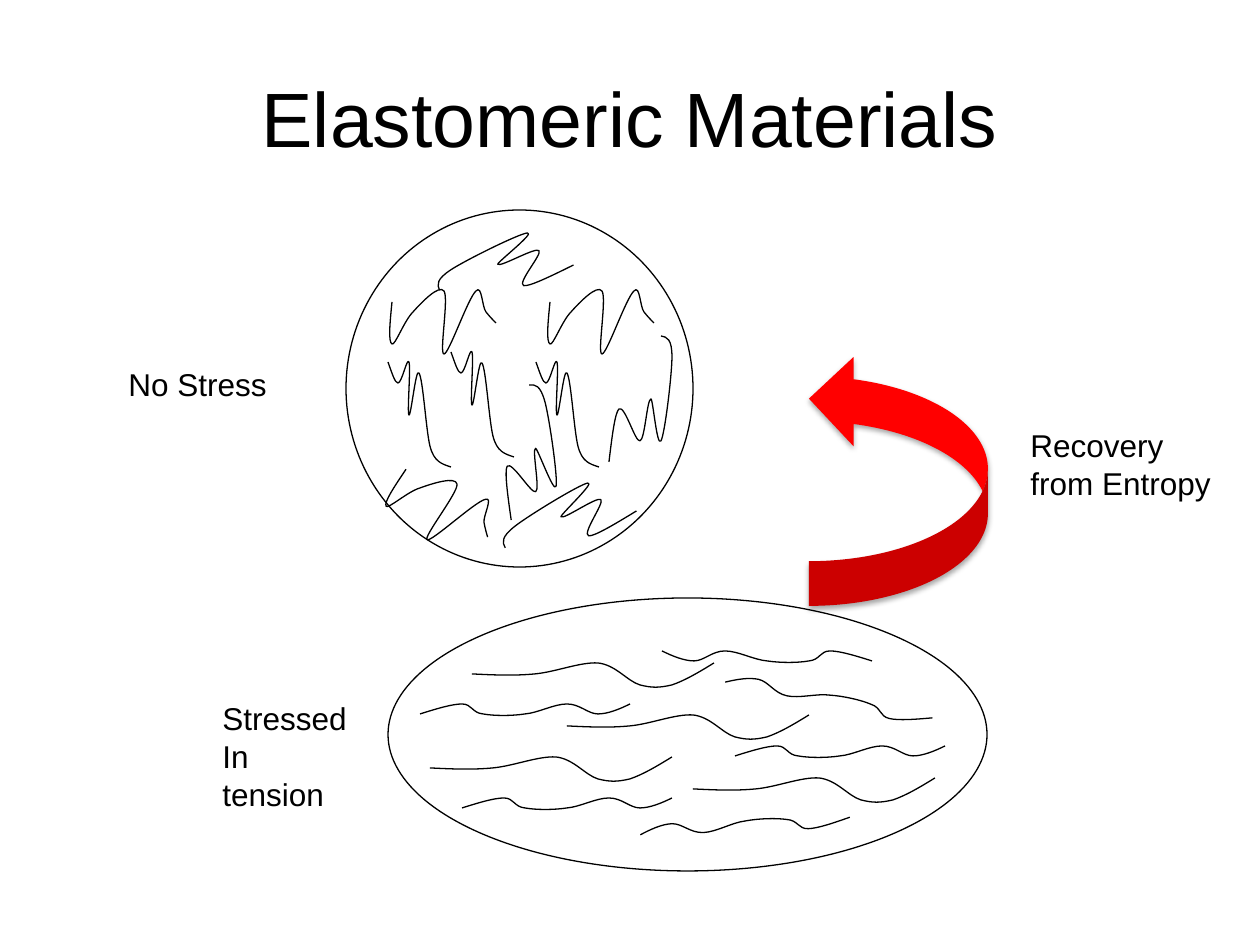
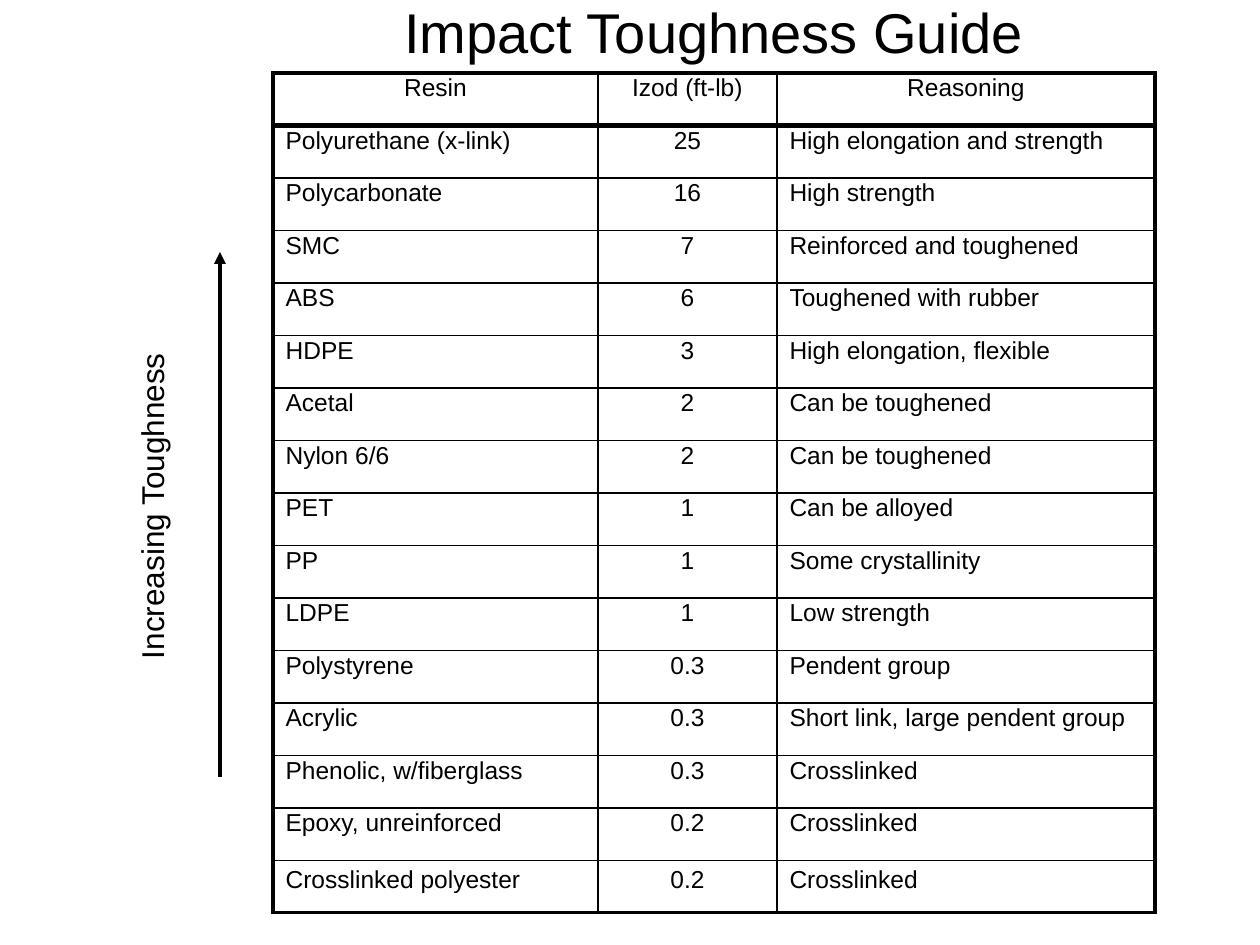
from lxml.etree import SubElement
from pptx import Presentation
from pptx.dml.color import RGBColor
from pptx.enum.shapes import MSO_CONNECTOR, MSO_SHAPE
from pptx.enum.text import MSO_ANCHOR, MSO_AUTO_SIZE, PP_ALIGN
from pptx.oxml.ns import qn
from pptx.util import Emu, Pt

SCALE = 914400 / 126  # EMU in one px
BLACK = RGBColor(0x00, 0x00, 0x00)
RED = RGBColor(0xFF, 0x00, 0x00)
FONT = "Arial"
TITLE_ONLY = 5

# Chain curves: a start point, then three Bezier points for each segment
WAVE = [(4, 18),
        (2, 38), (0, 58), (4, 60), (7, 62), (16, 37), (25, 28),
        (33, 19), (51, 0), (56, 7), (61, 14), (51, 70), (56, 70),
        (61, 70), (80, 14), (88, 7), (94, 0), (94, 23), (98, 28),
        (102, 33), (105, 36), (108, 39)]
HOOK = [(0, 5),
        (4, 16), (7, 26), (10, 26), (14, 26), (19, 0), (21, 5),
        (23, 10), (19, 56), (21, 58), (23, 60), (28, 10), (31, 16),
        (35, 21), (38, 73), (42, 89), (46, 105), (54, 107), (63, 110)]
COIL = [(0, 126),
        (3, 101), (6, 77), (10, 73), (16, 69), (26, 106), (31, 105),
        (36, 104), (38, 63), (42, 63), (44, 63), (48, 112), (52, 105),
        (56, 98), (63, 38), (63, 21), (63, 3), (58, 1), (52, 0)]
SWELL = [(0, 12),
         (21, 13), (42, 14), (63, 12), (84, 10), (108, 0), (126, 1),
         (144, 3), (155, 19), (168, 23), (180, 26), (187, 26), (200, 23),
         (212, 19), (226, 11), (242, 1)]
RIPPLE = [(0, 10),
          (16, 5), (32, 0), (42, 0), (52, 0), (52, 9), (63, 10),
          (74, 12), (92, 12), (105, 10), (118, 9), (134, 0), (147, 0),
          (160, 0), (168, 10), (178, 10), (188, 10), (200, 5), (210, 0)]

# Chains in each material: curve, left, top, rotation, flipped
COILED_CHAINS = [
    (WAVE, 200, 74, 0, False), (WAVE, 42, 74, 0, False),
    (WAVE, 42, 263, 28.3, False),
    (HOOK, 42, 147, 0, False), (HOOK, 190, 147, 0, False),
    (HOOK, 105, 137, 0, False),
    (COIL, 263, 126, 0, False), (COIL, 190, 252, 231.9, False),
    (COIL, 148, 178, 345.1, False), (COIL, 126, 0, 236.9, False),
]
ALIGNED_CHAINS = [
    (SWELL, 84, 64, 0, False), (SWELL, 179, 116, 0, False),
    (SWELL, 42, 158, 0, False), (SWELL, 305, 179, 0, False),
    (RIPPLE, 32, 106, 0, False), (RIPPLE, 347, 148, 0, False),
    (RIPPLE, 336, 95, 192.5, False), (RIPPLE, 274, 53, 180, True),
    (RIPPLE, 74, 200, 0, False), (RIPPLE, 252, 221, 177.9, False),
]

TOUGHNESS = [
    ("Resin", "Izod (ft-lb)", "Reasoning"),
    ("Polyurethane (x-link)", "25", "High elongation and strength"),
    ("Polycarbonate", "16", "High strength"),
    ("SMC", "7", "Reinforced and toughened"),
    ("ABS", "6", "Toughened with rubber"),
    ("HDPE", "3", "High elongation, flexible"),
    ("Acetal", "2", "Can be toughened"),
    ("Nylon 6/6", "2", "Can be toughened"),
    ("PET", "1", "Can be alloyed"),
    ("PP", "1", "Some crystallinity"),
    ("LDPE", "1", "Low strength"),
    ("Polystyrene", "0.3", "Pendent group"),
    ("Acrylic", "0.3", "Short link, large pendent group"),
    ("Phenolic, w/fiberglass", "0.3", "Crosslinked"),
    ("Epoxy, unreinforced", "0.2", "Crosslinked"),
    ("Crosslinked polyester", "0.2", "Crosslinked"),
]
COLUMN_WIDTHS = (325, 179, 378)


def px(*lengths):
    return [Emu(round(length * SCALE)) for length in lengths]


def set_font(para, size):
    para.font.name = FONT
    para.font.size = Pt(size)
    para.font.color.rgb = BLACK


def flip_vertically(shape):
    shape.element.spPr.find(qn("a:xfrm")).set("flipV", "1")


def outline(shape):
    shape.shadow.inherit = False
    shape.fill.background()
    shape.line.color.rgb = BLACK
    shape.line.width = Pt(0.75)


def add_page(deck, title, box, size):
    page = deck.slides.add_slide(deck.slide_layouts[TITLE_ONLY])
    holder = page.shapes.title
    holder.left, holder.top, holder.width, holder.height = px(*box)
    frame = holder.text_frame
    frame.text = title
    frame.auto_size = MSO_AUTO_SIZE.NONE
    frame.vertical_anchor = MSO_ANCHOR.MIDDLE
    para = frame.paragraphs[0]
    para.alignment = PP_ALIGN.CENTER
    set_font(para, size)
    return page


def add_label(shapes, text, box):
    label = shapes.add_textbox(*px(*box))
    frame = label.text_frame
    frame.word_wrap = False
    frame.auto_size = MSO_AUTO_SIZE.SHAPE_TO_FIT_TEXT
    frame.text = text
    for para in frame.paragraphs:
        set_font(para, 18)
    return label


def add_chain(shapes, curve, left, top, rotation, flipped):
    builder = shapes.build_freeform(*curve[0], scale=SCALE)
    builder.add_line_segments(curve[1:], close=False)
    chain = builder.convert_to_shape(*px(left, top))
    # Join each three line segments into one Bezier segment
    outline_path = next(chain.element.iter(qn("a:path")))
    segments = outline_path.findall(qn("a:lnTo"))
    for start in range(0, len(segments), 3):
        bezier = SubElement(outline_path, qn("a:cubicBezTo"))
        for segment in segments[start:start + 3]:
            bezier.append(segment[0])
            outline_path.remove(segment)
    outline(chain)
    chain.rotation = rotation
    if flipped:
        flip_vertically(chain)


def draw_material(page, box, chains, caption, caption_box):
    left, top, width, height = box
    shapes = page.shapes.add_group_shape().shapes
    outline(shapes.add_shape(MSO_SHAPE.OVAL, *px(*box)))
    for curve, x, y, rotation, flipped in chains:
        add_chain(shapes, curve, left + x, top + y, rotation, flipped)
    x, y, caption_width, caption_height = caption_box
    add_label(shapes, caption,
              (left + x, top + y, caption_width, caption_height))


def draw_recovery(page, box):
    left, top, width, height = box
    arrow = page.shapes.add_shape(MSO_SHAPE.CURVED_LEFT_ARROW, *px(*box))
    arrow.fill.solid()
    arrow.fill.fore_color.rgb = RED
    arrow.line.fill.background()
    flip_vertically(arrow)
    # Soft shadow straight below
    arrow.shadow.inherit = False
    effects = arrow.element.spPr.find(qn("a:effectLst"))
    shadow = SubElement(effects, qn("a:outerShdw"), blurRad=str(Pt(3.1)),
                        dist=str(Pt(1.8)), dir="5400000", rotWithShape="0")
    color = SubElement(shadow, qn("a:srgbClr"), val=str(BLACK))
    SubElement(color, qn("a:alpha"), val="35000")
    add_label(page.shapes, "Recovery\nfrom Entropy",
              (left + width + 30, top + 66, 208, 89))


def set_borders(cell, widths):
    properties = cell._tc.get_or_add_tcPr()
    for side, width in zip("LRTB", widths):
        border = SubElement(properties, qn(f"a:ln{side}"), w=str(Pt(width)))
        fill = SubElement(border, qn("a:solidFill"))
        SubElement(fill, qn("a:srgbClr"), val=str(BLACK))


def draw_table(page, box):
    row_count, column_count = len(TOUGHNESS), len(COLUMN_WIDTHS)
    table = page.shapes.add_table(row_count, column_count, *px(*box)).table
    table.first_row = table.horz_banding = False
    for column, width in zip(table.columns, px(*COLUMN_WIDTHS)):
        column.width = width
    row_height, = px(box[3] / row_count)
    # Line widths: heavy frame, heavier rule below the heading
    across = [2.25, 3] + [1] * (row_count - 2) + [2.25]
    down = [2.25] + [1] * (column_count - 1) + [2.25]
    for r, texts in enumerate(TOUGHNESS):
        table.rows[r].height = row_height
        for c, text in enumerate(texts):
            cell = table.cell(r, c)
            set_borders(cell, (down[c], down[c + 1], across[r], across[r + 1]))
            cell.fill.background()
            cell.text = text
            para = cell.text_frame.paragraphs[0]
            centered = r == 0 or c == 1
            para.alignment = PP_ALIGN.CENTER if centered else PP_ALIGN.LEFT
            para.line_spacing = 1.0 if r == row_count - 1 else 0.8
            set_font(para, 14)


def draw_toughness_scale(page, box):
    left, top, width, height = box
    right, bottom = left + width, top + height
    arrow = page.shapes.add_connector(MSO_CONNECTOR.STRAIGHT,
                                      *px(right, bottom, right, top))
    arrow.line.color.rgb = BLACK
    arrow.line.width = Pt(2.25)
    SubElement(arrow.line._get_or_add_ln(), qn("a:tailEnd"), type="triangle")
    SubElement(arrow.element.spPr, qn("a:effectLst"))
    # Label turned to read upwards
    label = add_label(page.shapes, "Increasing Toughness",
                      (left - 142, top + 227, 335, 50))
    label.rotation = 270


def main():
    deck = Presentation()
    deck.slide_width, deck.slide_height = px(1260, 945)

    page = add_page(deck, "Elastomeric Materials", (63, 38, 1134, 158), 44)
    draw_material(page, (346, 210, 347, 357), COILED_CHAINS,
                  "No Stress", (-230, 149, 164, 50))
    draw_material(page, (388, 598, 599, 273), ALIGNED_CHAINS,
                  "Stressed\nIn tension", (-178, 95, 161, 88))
    draw_recovery(page, (809, 354, 179, 252))

    page = add_page(deck, "Impact Toughness Guide", (231, 0, 966, 63), 32)
    draw_table(page, (273, 73, 882, 840))
    draw_toughness_scale(page, (126, 252, 94, 525))

    deck.save("out.pptx")


if __name__ == "__main__":
    main()
